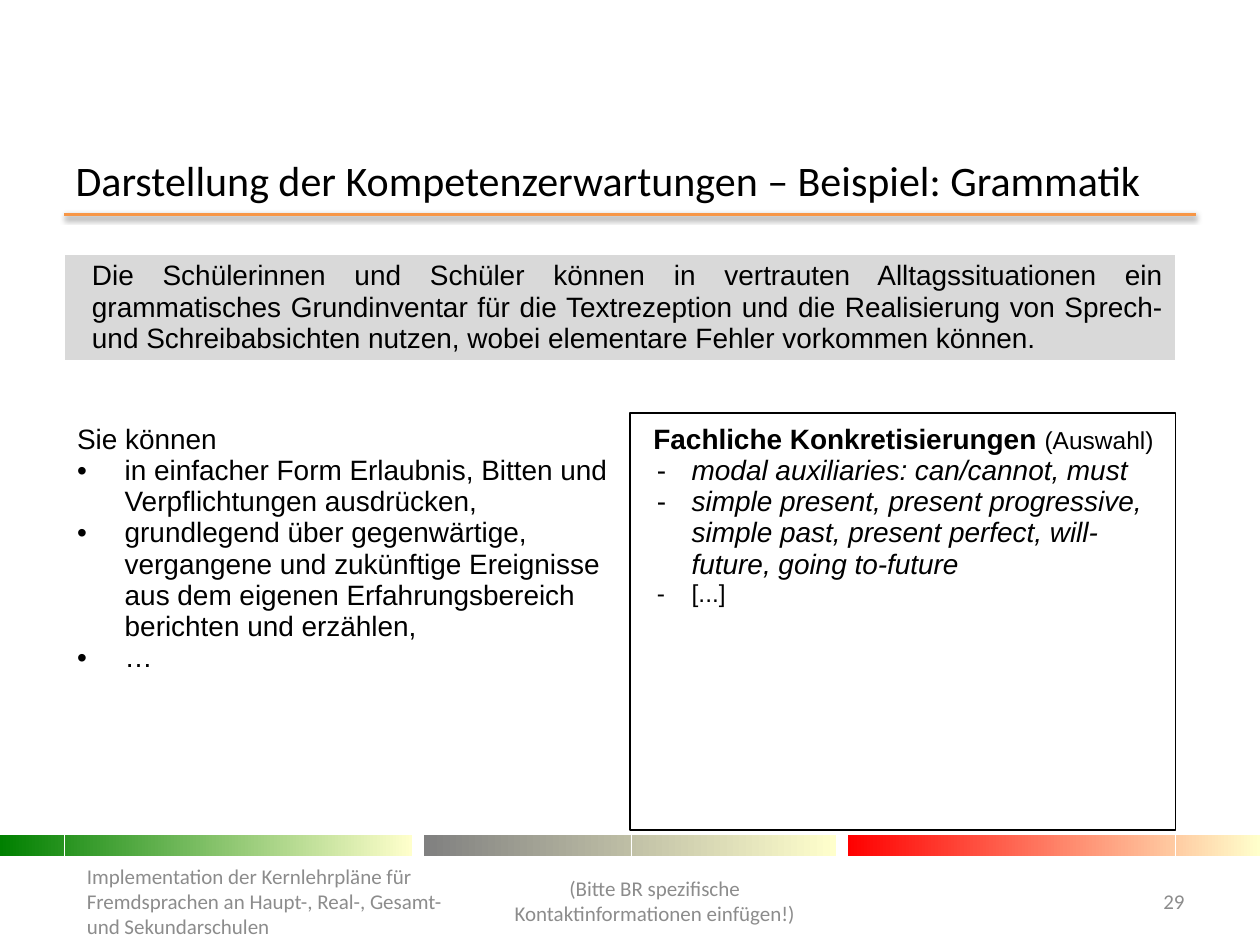
from lxml.etree import SubElement
from pptx import Presentation
from pptx.dml.color import RGBColor
from pptx.enum.shapes import MSO_CONNECTOR, MSO_SHAPE
from pptx.enum.text import MSO_ANCHOR, PP_ALIGN
from pptx.oxml.ns import qn
from pptx.util import Cm, Pt

BLACK = RGBColor(0, 0, 0)
WHITE = RGBColor(255, 255, 255)
GREY = RGBColor(0x8C, 0x8C, 0x8C)
SILVER = RGBColor(0xD9, 0xD9, 0xD9)
ORANGE = RGBColor(0xF7, 0x96, 0x46)
CREAM = RGBColor(0xFF, 0xFF, 0xCC)
BARS = [RGBColor(0, 0x80, 0), RGBColor(0x80, 0x80, 0x80), RGBColor(255, 0, 0)]

GOAL = ("Die Schülerinnen und Schüler können in vertrauten Alltagssituationen ein "
        "grammatisches Grundinventar für die Textrezeption und die Realisierung von "
        "Sprech- und Schreibabsichten nutzen, wobei elementare Fehler vorkommen können.")
SKILLS = [
    "in einfacher Form Erlaubnis, Bitten und Verpflichtungen ausdrücken,",
    "grundlegend über gegenwärtige, vergangene und zukünftige Ereignisse "
    "aus dem eigenen Erfahrungsbereich berichten und erzählen,",
    "…",
]
TOPICS = [
    "modal auxiliaries: can/cannot, must",
    "simple present, present progressive, simple past, present perfect, "
    "will- future, going to-future",
]


def write(par, text, size=16, name="Arial", color=BLACK, bold=False, italic=False,
          align=PP_ALIGN.LEFT, space=None, left=0, hang=0, mark=None):
    par.alignment = align
    props = par._p.get_or_add_pPr()
    if left:
        props.set("marL", str(Cm(left)))
        props.set("indent", str(-Cm(hang)))
    if mark:
        SubElement(props, qn("a:buFont"), typeface="Arial")
        SubElement(props, qn("a:buChar"), char=mark)
    if space:
        par.line_spacing = space
    run = par.add_run()
    run.text = text
    font = run.font
    font.size, font.name, font.bold, font.italic = Pt(size), name, bold, italic
    font.color.rgb = color


def place(shape, box):
    shape.left, shape.top, shape.width, shape.height = map(Cm, box)


def add_title(slide, box, text):
    title = slide.shapes.title
    place(title, box)
    frame = title.text_frame
    frame.vertical_anchor = MSO_ANCHOR.MIDDLE
    write(frame.paragraphs[0], text, size=24, name="Calibri")


def add_rule(slide, box):
    x, y, width, drop = box
    rule = slide.shapes.add_connector(
        MSO_CONNECTOR.STRAIGHT, Cm(x), Cm(y), Cm(x + width), Cm(y + drop))
    rule.line.color.rgb = ORANGE
    rule.line.width = Pt(2)
    effects = SubElement(rule._element.spPr, qn("a:effectLst"))
    shadow = SubElement(effects, qn("a:outerShdw"), blurRad=str(Pt(3.1)),
                        dist=str(Pt(1.6)), dir="5400000", rotWithShape="0")
    tint = SubElement(shadow, qn("a:srgbClr"), val="000000")
    SubElement(tint, qn("a:alpha"), val="38000")


def add_bars(slide, box):
    x, y, width, height = box
    size = 8.31
    step = (width - size) / (len(BARS) - 1)
    for i, color in enumerate(BARS):
        bar = slide.shapes.add_shape(
            MSO_SHAPE.RECTANGLE, Cm(x + i * step), Cm(y), Cm(size), Cm(height))
        bar.shadow.inherit = False
        bar.line.fill.background()
        bar.fill.gradient()
        bar.fill.gradient_angle = 0
        for stop, tone in zip(bar.fill.gradient_stops, (color, CREAM)):
            stop.color.rgb = tone


def add_grid(slide, box):
    x, y, width, height = box
    rows = [2.13, 1.07, height - 3.2]
    cols = [11.43, width - 11.43]
    table = slide.shapes.add_table(3, 2, *map(Cm, box)).table
    table.first_row = table.horz_banding = False
    for row, size in zip(table.rows, rows):
        row.height = Cm(size)
    for col, size in zip(table.columns, cols):
        col.width = Cm(size)
    for i, color in enumerate((SILVER, WHITE)):
        table.cell(i, 0).merge(table.cell(i, 1))
        for j in range(2):
            fill = table.cell(i, j).fill
            fill.solid()
            fill.fore_color.rgb = color
    write(table.cell(0, 0).text_frame.paragraphs[0], GOAL,
          align=PP_ALIGN.JUSTIFY, left=0.3)

    skills, topics = table.cell(2, 0), table.cell(2, 1)
    for cell in (skills, topics):
        cell.fill.background()
    frame = skills.text_frame
    write(frame.paragraphs[0], "Sie können", space=1.15)
    for text in SKILLS:
        write(frame.add_paragraph(), text, left=0.96, hang=0.96, mark="•")

    frame = topics.text_frame
    head = frame.paragraphs[0]
    write(head, "Fachliche Konkretisierungen ", bold=True,
          align=PP_ALIGN.CENTER, space=1.15)
    write(head, "(Auswahl)", size=14, align=PP_ALIGN.CENTER)
    for text in TOPICS:
        write(frame.add_paragraph(), text, italic=True, left=0.96, hang=0.7, mark="-")
    write(frame.add_paragraph(), "[...]", size=14, left=0.96, hang=0.7, mark="-")


def add_frame(slide, box):
    frame = slide.shapes.add_shape(MSO_SHAPE.RECTANGLE, *map(Cm, box))
    frame.shadow.inherit = False
    frame.fill.background()
    frame.line.color.rgb = BLACK
    frame.line.width = Pt(1)


def add_note(slide, box, text, align):
    frame = slide.shapes.add_textbox(*map(Cm, box)).text_frame
    frame.word_wrap = True
    frame.vertical_anchor = MSO_ANCHOR.MIDDLE
    write(frame.paragraphs[0], text, size=12, name="Calibri", color=GREY, align=align)


def main():
    deck = Presentation()
    deck.slide_width, deck.slide_height = Cm(25.4), Cm(19.05)
    slide = deck.slides.add_slide(deck.slide_layouts[5])
    add_rule(slide, (1.3, 4.32, 22.8, 0))
    add_bars(slide, (0, 16.84, 25.4, 0.41))
    add_title(slide, (1.27, 3.12, 22.86, 1),
              "Darstellung der Kompetenzerwartungen – Beispiel: Grammatik")
    add_grid(slide, (1.3, 5.13, 22.4, 12.52))
    add_frame(slide, (12.7, 8.33, 11, 8.41))
    add_note(slide, (1.5, 17.3, 8, 1.73),
             "Implementation der Kernlehrpläne für Fremdsprachen an Haupt-, Real-, "
             "Gesamt- und Sekundarschulen", PP_ALIGN.LEFT)
    add_note(slide, (9.5, 17.25, 7.4, 1.8),
             "(Bitte BR spezifische Kontaktinformationen einfügen!)", PP_ALIGN.CENTER)
    add_note(slide, (22.5, 17.65, 1.63, 1.02), "29", PP_ALIGN.RIGHT)
    deck.save("out.pptx")


if __name__ == "__main__":
    main()
